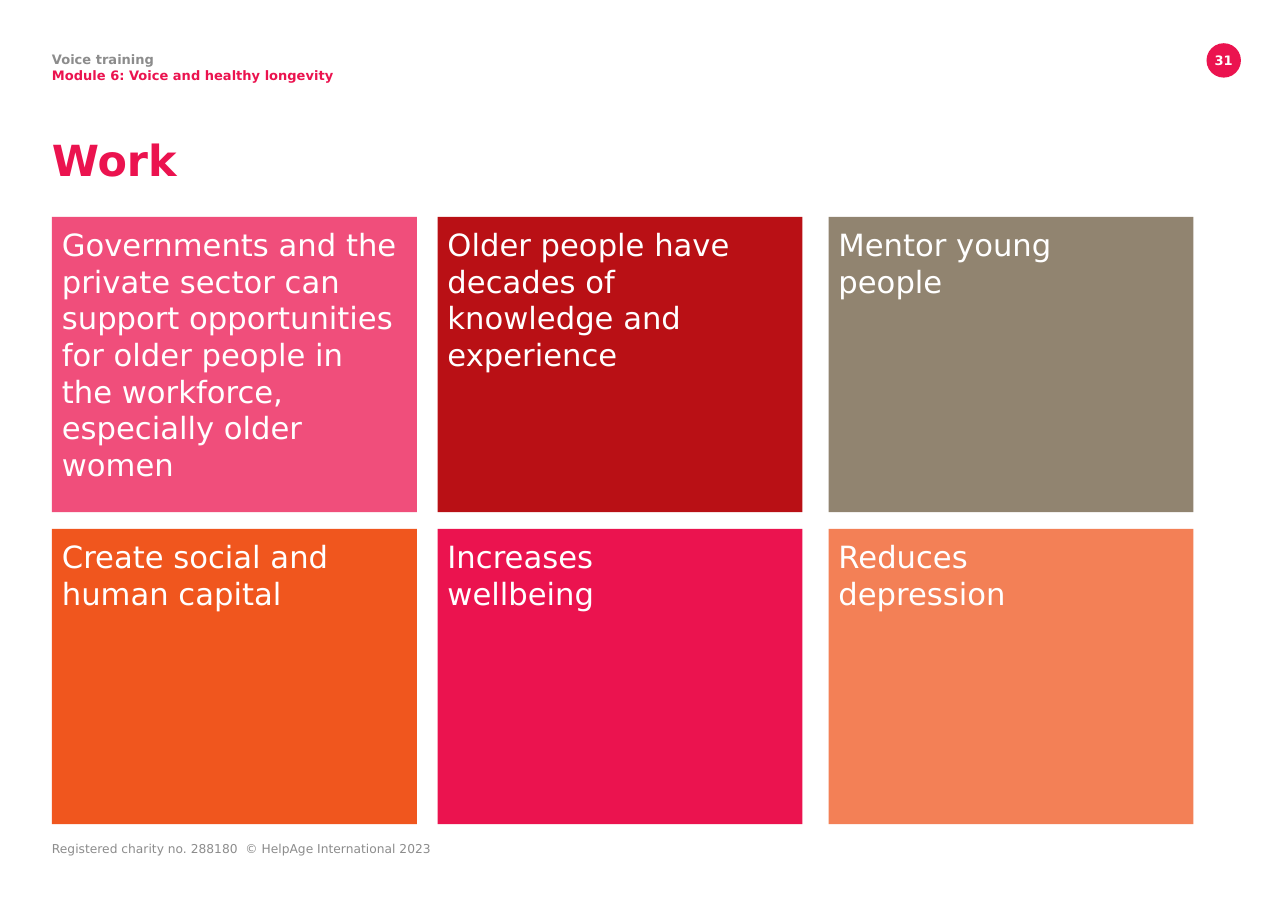
from dataclasses import dataclass

from pptx import Presentation
from pptx.dml.color import RGBColor
from pptx.enum import shapes, text
from pptx.oxml import ns
from pptx.util import Pt
from lxml import etree


@dataclass(frozen=True)
class Theme:
    font: str = "DejaVu Sans"
    pink: str = "EB134F"
    red: str = "B91015"
    taupe: str = "918470"
    orange: str = "F0561E"
    grey: str = "8C8C8C"
    white: str = "FFFFFF"
    title: float = 28
    card: float = 20
    header: float = 8.5
    footer: float = 8


THEME = Theme()
LEFT = 34
COLUMNS = (LEFT, 286, 541.5)
ROWS = (141.75, 345.75)
CARD_WIDTH, CARD_HEIGHT = 238.5, 193

# Wording, fill colour, opacity in percent; row by row
CARDS = (
    ("Governments and the private sector can support opportunities "
     "for older people in the workforce, especially older women", THEME.pink, 75),
    ("Older people have decades of knowledge and experience", THEME.red, 100),
    ("Mentor young \npeople", THEME.taupe, 100),
    ("Create social and human capital", THEME.orange, 100),
    ("Increases \nwellbeing", THEME.pink, 100),
    ("Reduces \ndepression", THEME.orange, 75),
)


def set_frame(frame, insets=(0, 0, 0, 0), anchor=text.MSO_ANCHOR.TOP):
    """Insets run left, top, right, bottom."""
    frame.word_wrap = True
    frame.vertical_anchor = anchor
    frame.margin_left, frame.margin_top, frame.margin_right, frame.margin_bottom = map(Pt, insets)


def write(paragraph, wording, size, color, bold=False, leading=None, align=text.PP_ALIGN.LEFT):
    """Fill a paragraph; a newline in the wording becomes a line break."""
    paragraph.alignment = align
    if leading:
        paragraph.line_spacing = Pt(leading)
    for index, line in enumerate(wording.split("\n")):
        if index:
            paragraph.add_line_break()
        run = paragraph.add_run()
        run.text = line
        run.font.name = THEME.font
        run.font.size = Pt(size)
        run.font.bold = bold
        run.font.color.rgb = RGBColor.from_string(color)


def add_text(slide, left, top, width, height):
    frame = slide.shapes.add_textbox(Pt(left), Pt(top), Pt(width), Pt(height)).text_frame
    set_frame(frame)
    return frame


def add_filled(slide, preset, left, top, width, height, color, opacity=100):
    shape = slide.shapes.add_shape(preset, Pt(left), Pt(top), Pt(width), Pt(height))
    shape.shadow.inherit = False
    shape.line.fill.background()
    shape.fill.solid()
    shape.fill.fore_color.rgb = RGBColor.from_string(color)
    if opacity < 100:
        fill_color = shape.fill._xPr.find(ns.qn("a:solidFill"))[0]
        etree.SubElement(fill_color, ns.qn("a:alpha"), val=str(opacity * 1000))
    return shape


def add_header(slide):
    header = add_text(slide, LEFT, 34, 369, 32)
    write(header.paragraphs[0], "Voice training", THEME.header, THEME.grey, True, 10)
    write(header.add_paragraph(), "Module 6: Voice and healthy longevity",
          THEME.header, THEME.pink, True, 10)


def add_page_number(slide, number):
    badge = add_filled(slide, shapes.MSO_SHAPE.OVAL, 788.5, 28.25, 22.5, 22.5, THEME.pink)
    set_frame(badge.text_frame, anchor=text.MSO_ANCHOR.MIDDLE)
    badge.text_frame.word_wrap = False
    write(badge.text_frame.paragraphs[0], number, THEME.header, THEME.white, True,
          align=text.PP_ALIGN.CENTER)


def add_card(slide, left, top, wording, color, opacity):
    card = add_filled(slide, shapes.MSO_SHAPE.RECTANGLE, left, top,
                      CARD_WIDTH, CARD_HEIGHT, color, opacity)
    set_frame(card.text_frame, (6.5, 5.75, 11.5, 5.75))
    write(card.text_frame.paragraphs[0], wording, THEME.card, THEME.white, leading=24)


def main():
    deck = Presentation()
    deck.slide_width, deck.slide_height = Pt(841.75), Pt(595.5)
    slide = deck.slides.add_slide(deck.slide_layouts[6])

    add_header(slide)
    add_page_number(slide, "31")
    title = add_text(slide, LEFT, 88, 665, 55)
    write(title.paragraphs[0], "Work", THEME.title, THEME.pink, True, 33)

    for index, (wording, color, opacity) in enumerate(CARDS):
        row, column = divmod(index, len(COLUMNS))
        add_card(slide, COLUMNS[column], ROWS[row], wording, color, opacity)

    footer = add_text(slide, LEFT, 550, 332, 24)
    write(footer.paragraphs[0], "Registered charity no. 288180  © HelpAge International 2023",
          THEME.footer, THEME.grey)
    deck.save("out.pptx")


if __name__ == "__main__":
    main()
